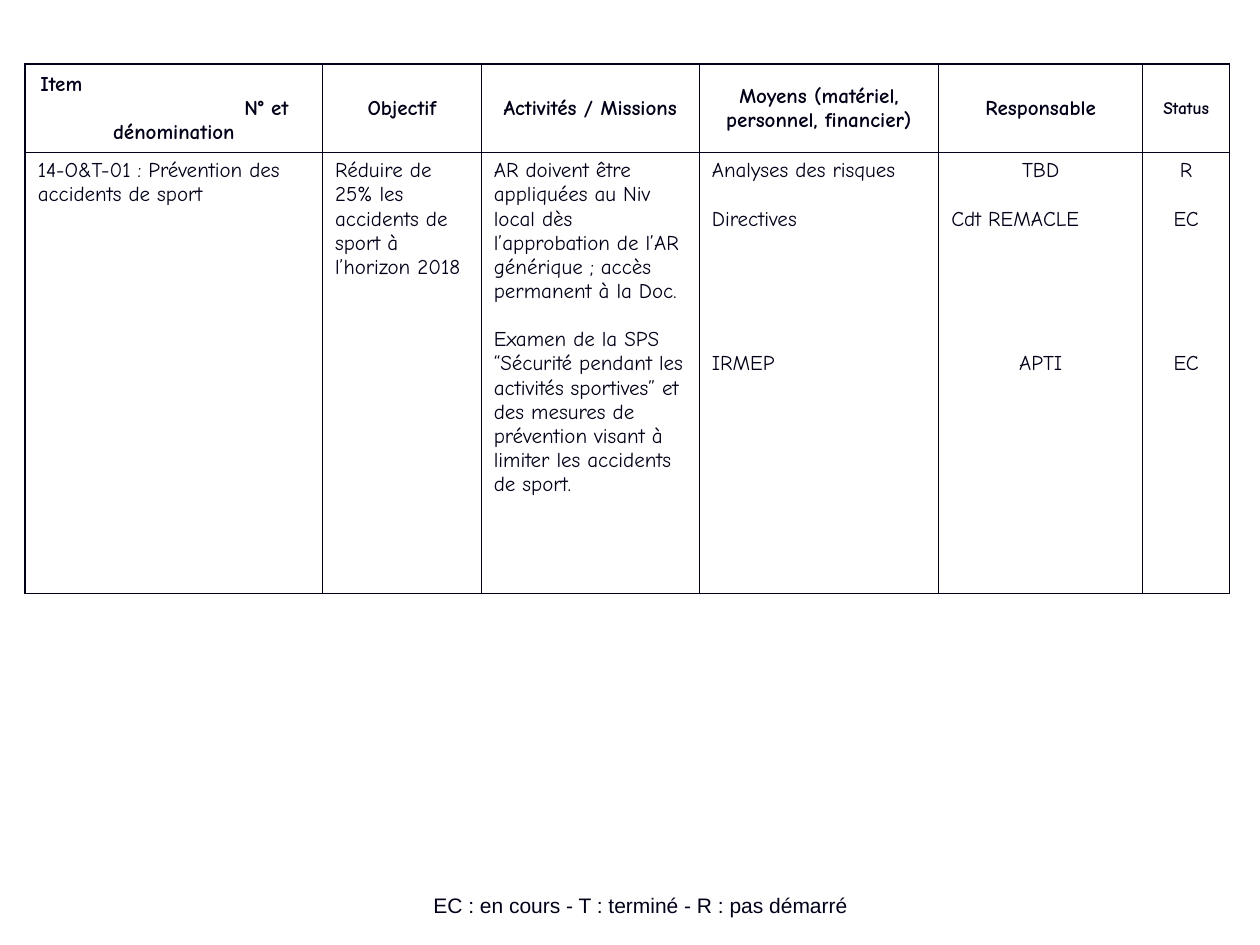
"""Build the action plan slide: a one-item follow-up table and its status key."""
from dataclasses import dataclass
from typing import Any

from lxml.etree import SubElement
from pptx import Presentation
from pptx.dml.color import RGBColor
from pptx.enum.text import MSO_ANCHOR, PP_ALIGN
from pptx.oxml.ns import qn
from pptx.util import Inches, Pt

COLORS = {"ink": "000018", "paper": "FFFFFF"}
FONT = "Comic Neue"
LINE = 13.8
COLS = (2.36, 1.26, 1.73, 1.9, 1.62, 0.69)
ROWS = (0.67, 3.5)
LEFT, CENTER = PP_ALIGN.LEFT, PP_ALIGN.CENTER


@dataclass(frozen=True)
class Para:
    text: str
    align: PP_ALIGN = LEFT
    lines_before: int = 0
    indent: float = 0
    size: float = 12


HEADERS = (
    (Para("Item", indent=0.02), Para("N° et", indent=1.64), Para("dénomination", CENTER)),
    (Para("Objectif", CENTER),),
    (Para("Activités / Missions", CENTER),),
    (Para("Moyens (matériel, personnel, financier)", CENTER),),
    (Para("Responsable", CENTER),),
    (Para("Status", CENTER, size=10),),
)
ITEM = (
    (Para("14-O&T-01 : Prévention des accidents de sport"),),
    (Para("Réduire de 25% les accidents de sport à l’horizon 2018"),),
    (
        Para("AR doivent être appliquées au Niv local dès l’approbation de l’AR "
             "générique ; accès permanent à la Doc."),
        Para("Examen de la SPS “Sécurité pendant les activités sportives” et des "
             "mesures de prévention visant à limiter les accidents de sport.", lines_before=1),
    ),
    (Para("Analyses des risques"), Para("Directives", lines_before=1),
     Para("IRMEP", lines_before=5)),
    (Para("TBD", CENTER), Para("Cdt REMACLE", lines_before=1),
     Para("APTI", CENTER, lines_before=5)),
    (Para("R", CENTER), Para("EC", CENTER, lines_before=1),
     Para("EC", CENTER, lines_before=5)),
)


def write(tf: Any, paras: tuple[Para, ...], font: str, bold: bool = False) -> None:
    """Fill a text frame with paragraphs."""
    tf.word_wrap = True
    for i, para in enumerate(paras):
        p = tf.paragraphs[0] if i == 0 else tf.add_paragraph()
        p.alignment = para.align
        if para.lines_before:
            p.space_before = Pt(para.lines_before * LINE)
        if para.indent:
            p._p.get_or_add_pPr().set("marL", str(Inches(para.indent)))
        r = p.add_run()
        r.text = para.text
        r.font.name = font
        r.font.size = Pt(para.size)
        r.font.bold = bold
        r.font.color.rgb = RGBColor.from_string(COLORS["ink"])


def add_borders(cell: Any) -> None:
    """Draw a one-point line on every side of a cell."""
    tc_pr = cell._tc.get_or_add_tcPr()
    for side in ("lnL", "lnR", "lnT", "lnB"):
        ln = SubElement(tc_pr, qn(f"a:{side}"), w=str(Pt(1)))
        fill = SubElement(ln, qn("a:solidFill"))
        SubElement(fill, qn("a:srgbClr"), val=COLORS["ink"])


def add_plan(s: Any) -> None:
    """Add the table with its header and item rows."""
    table = s.shapes.add_table(len(ROWS), len(COLS), Inches(0.2), Inches(0.51),
                               Inches(sum(COLS)), Inches(sum(ROWS))).table
    table.horz_banding = False
    for column, width in zip(table.columns, COLS):
        column.width = Inches(width)
    for i, (height, contents) in enumerate(zip(ROWS, (HEADERS, ITEM))):
        table.rows[i].height = Inches(height)
        for j, paras in enumerate(contents):
            cell = table.cell(i, j)
            cell.vertical_anchor = MSO_ANCHOR.MIDDLE if i == 0 else MSO_ANCHOR.TOP
            add_borders(cell)
            cell.fill.solid()
            cell.fill.fore_color.rgb = RGBColor.from_string(COLORS["paper"])
            write(cell.text_frame, paras, FONT, bold=i == 0)


def add_key(s: Any) -> None:
    """Add the status key at the foot of the slide."""
    sp = s.shapes.add_textbox(Inches(2.33), Inches(6.83), Inches(5.51), Inches(0.5))
    sp.text_frame.vertical_anchor = MSO_ANCHOR.BOTTOM
    write(sp.text_frame, (Para("EC : en cours - T : terminé - R : pas démarré", CENTER),), "Arial")


def main() -> None:
    """Build and save the slide."""
    prs = Presentation()
    prs.slide_width, prs.slide_height = Inches(10), Inches(7.5)
    s = prs.slides.add_slide(prs.slide_layouts[6])
    add_key(s)
    add_plan(s)
    prs.save("out.pptx")


if __name__ == "__main__":
    main()
